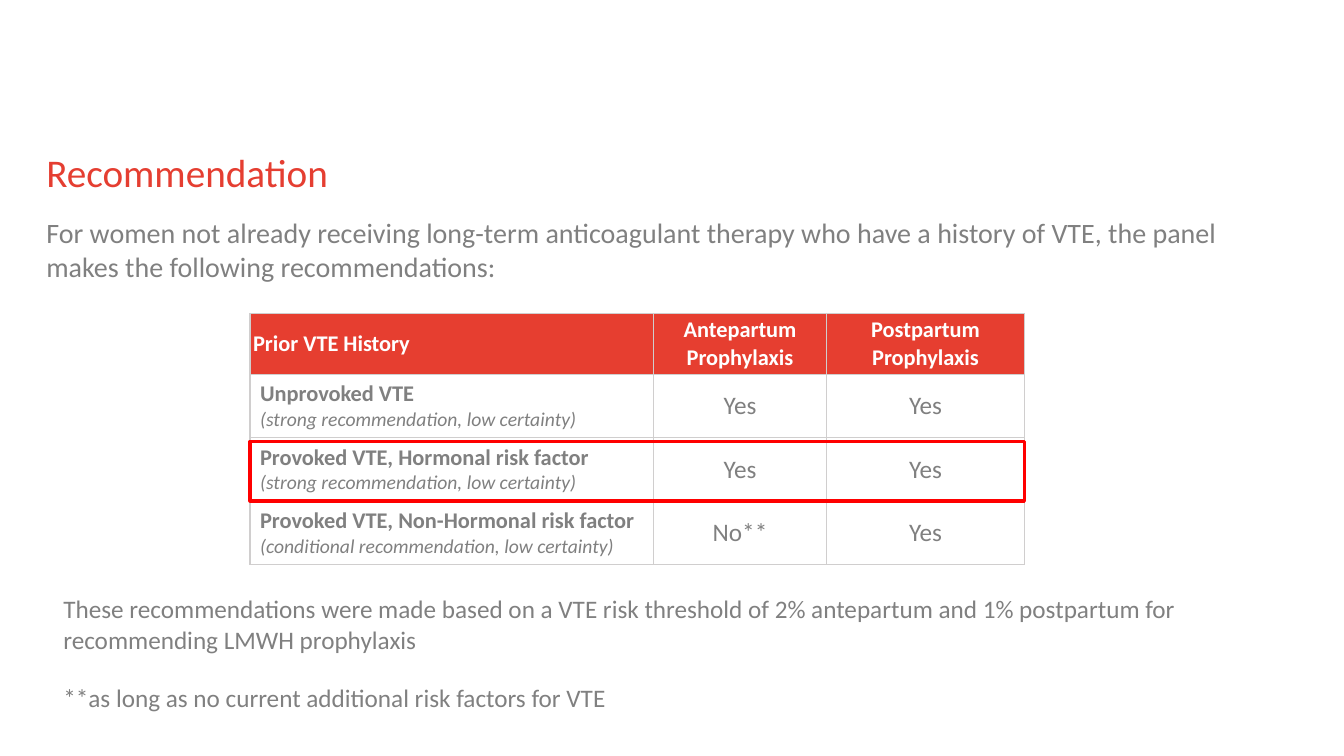
from dataclasses import dataclass

from lxml import etree
from pptx import Presentation
from pptx import util as u
from pptx.dml.color import RGBColor
from pptx.enum import shapes, text
from pptx.oxml import ns


@dataclass(frozen=True)
class Theme:
    font: str = "Calibri"
    title: str = "E53E31"
    header: str = "E63E30"
    body: str = "808080"
    white: str = "FFFFFF"
    border: str = "D0CECE"
    highlight: str = "FF0000"
    title_size: int = 28
    intro_size: int = 20
    text_size: int = 18
    label_size: int = 16
    certainty_size: int = 14


theme = Theme()


def write(paragraph, words, size, color, bold=False, italic=False):
    paragraph.text = words
    font = paragraph.font
    font.name, font.size = theme.font, u.Pt(size)
    font.bold, font.italic = bold, italic
    font.color.rgb = RGBColor.from_string(color)


def add_border(cell):
    properties = cell._tc.get_or_add_tcPr()
    for position, side in enumerate(("lnL", "lnR", "lnT", "lnB")):
        line = etree.Element(ns.qn(f"a:{side}"), w=str(u.Pt(1)))
        fill = etree.SubElement(line, ns.qn("a:solidFill"))
        etree.SubElement(fill, ns.qn("a:srgbClr"), val=theme.border)
        properties.insert(position, line)


deck = Presentation()
deck.slide_width, deck.slide_height = u.Inches(13.33), u.Inches(7.5)
slide = deck.slides.add_slide(deck.slide_layouts[6])

# Prophylaxis table
headings = ["Prior VTE History", "Antepartum Prophylaxis", "Postpartum Prophylaxis"]
histories = [
    ("Unprovoked VTE", "strong", "Yes", "Yes"),
    ("Provoked VTE, Hormonal risk factor", "strong", "Yes", "Yes"),
    ("Provoked VTE, Non-Hormonal risk factor", "conditional", "No**", "Yes"),
]
column_widths = [4, 1.72, 1.96]
row_heights = [0.6] + [0.63] * len(histories)
left, top, width = 2.48, 3.11, sum(column_widths)
prophylaxis = slide.shapes.add_table(
    len(row_heights), len(column_widths), u.Inches(left), u.Inches(top),
    u.Inches(width), u.Inches(sum(row_heights))).table
for column, column_width in zip(prophylaxis.columns, column_widths):
    column.width = u.Inches(column_width)
for row, height in zip(prophylaxis.rows, row_heights):
    row.height = u.Inches(height)

for column, heading in enumerate(headings):
    cell = prophylaxis.cell(0, column)
    cell.margin_left = cell.margin_right = u.Inches(0.03)
    cell.margin_top = cell.margin_bottom = u.Inches(0.03)
    cell.fill.solid()
    cell.fill.fore_color.rgb = RGBColor.from_string(theme.header)
    write(cell.text_frame.paragraphs[0], heading, theme.label_size, theme.white, bold=True)

for row, (history, strength, *answers) in enumerate(histories, start=1):
    label = prophylaxis.cell(row, 0).text_frame
    write(label.paragraphs[0], history, theme.label_size, theme.body, bold=True)
    write(label.add_paragraph(), f"({strength} recommendation, low certainty)",
          theme.certainty_size, theme.body, italic=True)
    for column, answer in enumerate(answers, start=1):
        write(prophylaxis.cell(row, column).text_frame.paragraphs[0], answer,
              theme.text_size, theme.body)
    for column in range(len(headings)):
        prophylaxis.cell(row, column).fill.background()

for row in prophylaxis.rows:
    for column, cell in enumerate(row.cells):
        cell.vertical_anchor = text.MSO_ANCHOR.MIDDLE
        if column:
            cell.text_frame.paragraphs[0].alignment = text.PP_ALIGN.CENTER
        add_border(cell)

# Frame around the hormonal risk factor row
highlight = slide.shapes.add_shape(
    shapes.MSO_SHAPE.RECTANGLE, u.Inches(left), u.Inches(4.38),
    u.Inches(width), u.Inches(0.59))
highlight.shadow.inherit = False
highlight.fill.background()
highlight.line.color.rgb = RGBColor.from_string(theme.highlight)
highlight.line.width = u.Pt(2.25)

# Title, introduction and notes below the table: place, insets, style, wording
passages = [
    (0.46, 1.47, 12, 0.6, 0, 0, theme.title_size, theme.title, "Recommendation"),
    (0.46, 2.14, 12, 0.8, 0, 0, theme.intro_size, theme.body,
     "For women not already receiving long-term anticoagulant therapy who have "
     "a history of VTE, the panel makes the following recommendations:"),
    (0.53, 5.84, 12.03, 0.71, 0.1, 0.05, theme.text_size, theme.body,
     "These recommendations were made based on a VTE risk threshold of 2% antepartum "
     "and 1% postpartum for recommending LMWH prophylaxis"),
    (0.53, 6.72, 12.03, 0.4, 0.1, 0.05, theme.text_size, theme.body,
     "**as long as no current additional risk factors for VTE"),
]
for x, y, w, h, side_inset, end_inset, size, color, words in passages:
    passage = slide.shapes.add_textbox(
        u.Inches(x), u.Inches(y), u.Inches(w), u.Inches(h)).text_frame
    passage.word_wrap = True
    passage.margin_left = passage.margin_right = u.Inches(side_inset)
    passage.margin_top = passage.margin_bottom = u.Inches(end_inset)
    write(passage.paragraphs[0], words, size, color)

deck.save("out.pptx")
